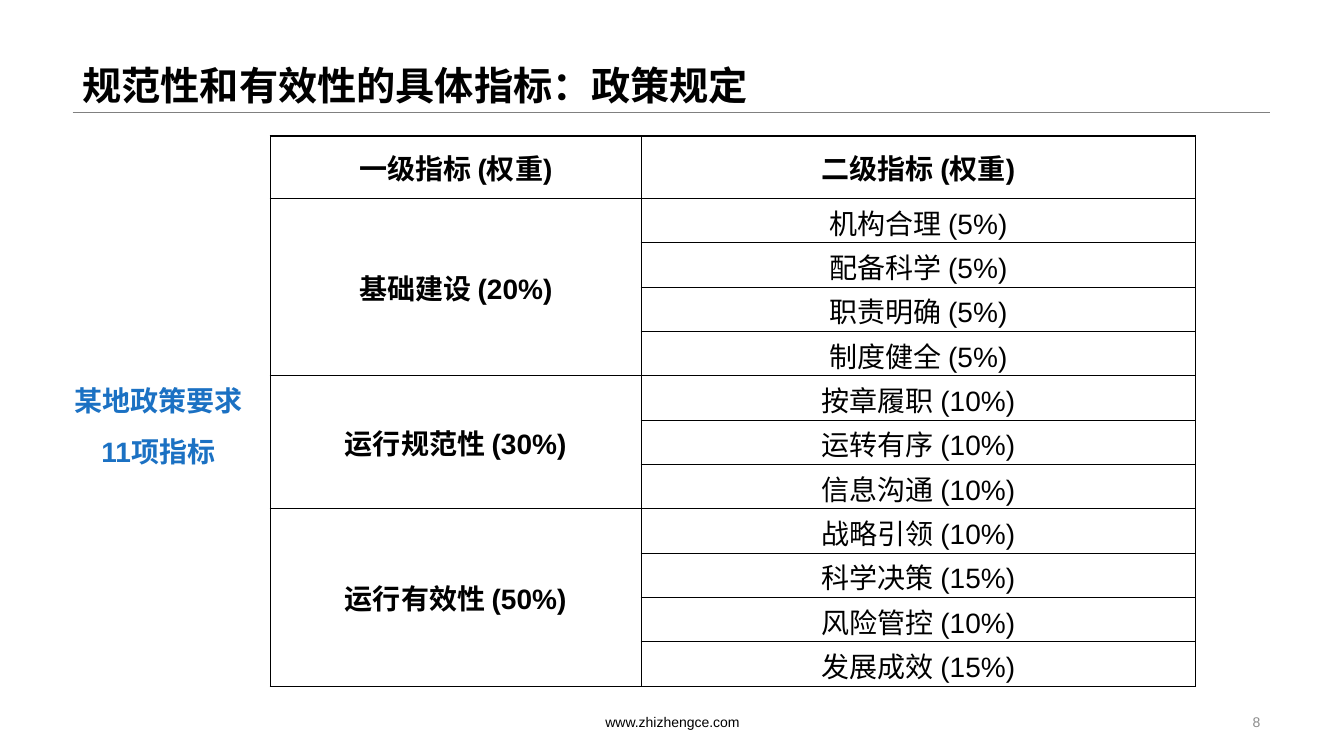
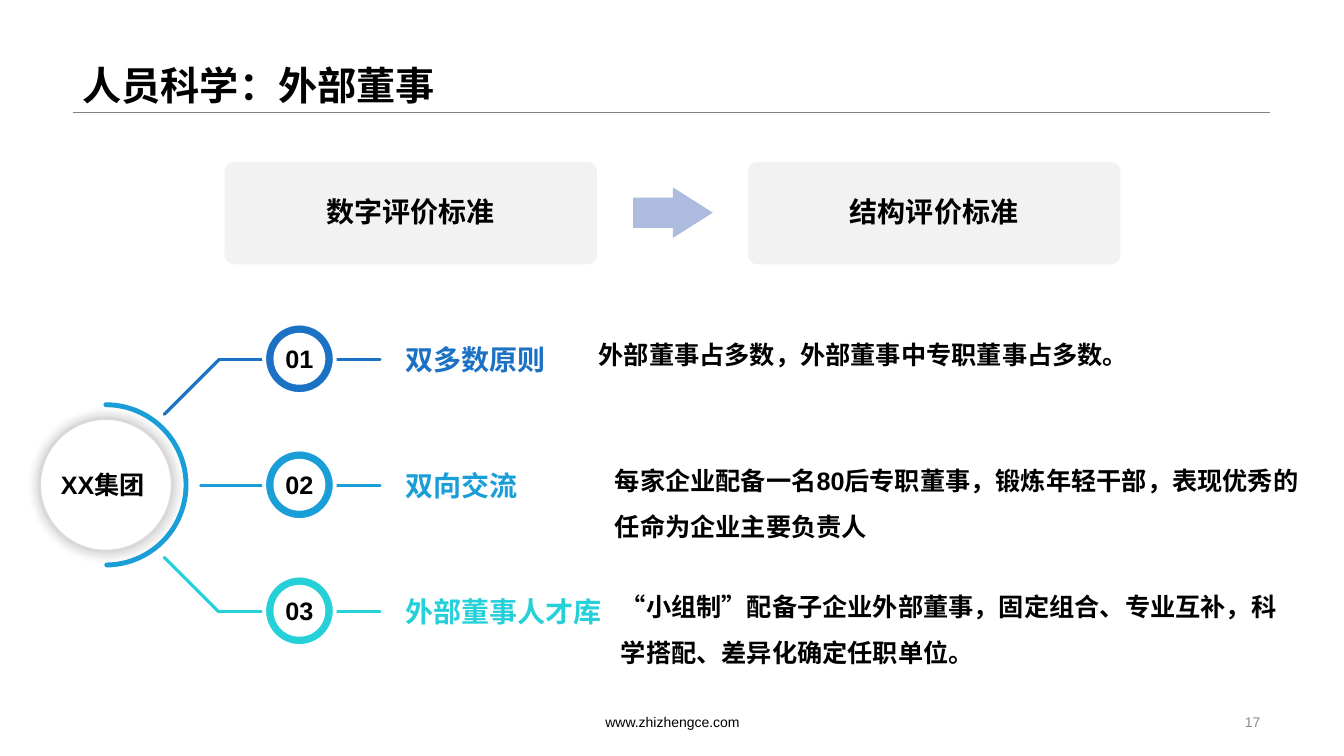
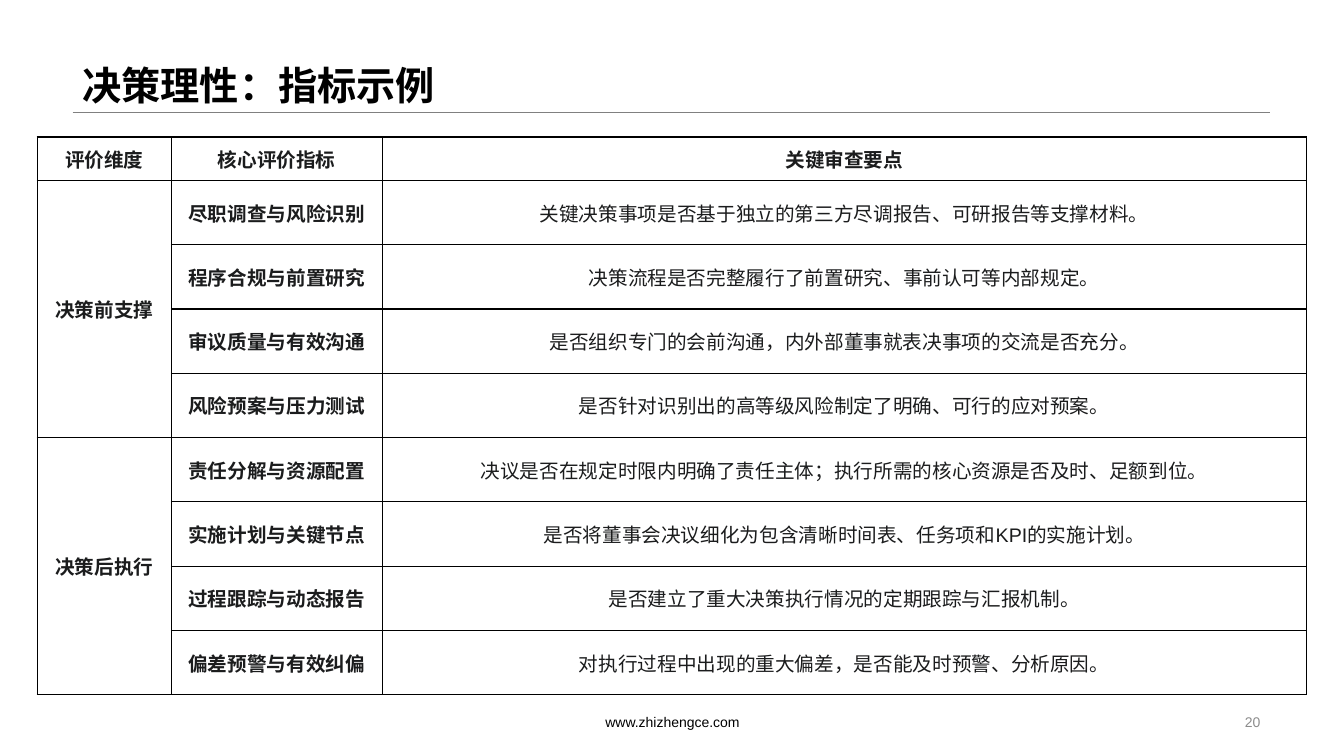
from lxml import etree
from pptx import Presentation
from pptx.dml.color import RGBColor
from pptx.enum.shapes import MSO_CONNECTOR, MSO_SHAPE
from pptx.enum.text import MSO_ANCHOR, PP_ALIGN
from pptx.oxml.ns import qn
from pptx.util import Emu, Inches, Pt

BLACK = RGBColor(0x00, 0x00, 0x00)
WHITE = RGBColor(0xFF, 0xFF, 0xFF)
INK = RGBColor(0x1B, 0x1C, 0x1D)
RULE = RGBColor(0x80, 0x80, 0x80)
MUTED = RGBColor(0x8C, 0x8C, 0x8C)
RING = RGBColor(0xD9, 0xD9, 0xD9)
PANEL = RGBColor(0xF2, 0xF2, 0xF2)
ARROW = RGBColor(0xAC, 0xBB, 0xDE)
BLUE = RGBColor(0x1B, 0x71, 0xC3)
SKY = RGBColor(0x19, 0x9E, 0xD7)
AQUA = RGBColor(0x26, 0xD0, 0xD8)

LEFT, MID, RIGHT = PP_ALIGN.LEFT, PP_ALIGN.CENTER, PP_ALIGN.RIGHT
TOP, CENTRE, BASE = MSO_ANCHOR.TOP, MSO_ANCHOR.MIDDLE, MSO_ANCHOR.BOTTOM
OVAL, DONUT, ARC = MSO_SHAPE.OVAL, MSO_SHAPE.DONUT, MSO_SHAPE.ARC
CARD, POINT = MSO_SHAPE.ROUNDED_RECTANGLE, MSO_SHAPE.RIGHT_ARROW
STRAIGHT = MSO_CONNECTOR.STRAIGHT

FONT, HAN = "Arial", "Noto Sans CJK SC"
CELL = 91440  # one grid column or row: a tenth of an inch


def grid(*units):
    """Turn grid columns or rows into lengths."""
    return [Emu(round(u * CELL)) for u in units]


def sub(node, tag, **attrs):
    return etree.SubElement(node, qn(tag), attrs)


class Deck:
    """Holds the style and the slide being filled."""

    def __init__(self):
        self.prs = Presentation()
        self.prs.slide_width = Inches(13.33)
        self.prs.slide_height = Inches(7.5)

    def page(self, title, number):
        """Start a slide with its title, rule, footer and number."""
        self.slide = self.prs.slides.add_slide(self.prs.slide_layouts[6])
        self.text(48.5, 70.3, 36.4, 2.7, "www.zhizhengce.com", 10, align=MID)
        self.line(7.2, 11.2, 126, 11.2, RULE, 0.75)
        self.text(7.2, 1.4, 118.8, 9.8, title, 28, bold=True, anchor=BASE,
                  font=HAN)
        self.text(85, 70.1, 41, 3, number, 10, MUTED, align=RIGHT,
                  anchor=CENTRE)

    def put(self, par, words, size, color=BLACK, bold=False, align=LEFT,
            font=FONT):
        """Add one styled run to a paragraph."""
        par.alignment = align
        run = par.add_run()
        run.text = words
        run.font.size, run.font.bold = Pt(size), bold
        run.font.color.rgb = color
        run.font.name = font
        sub(run.font._element, "a:ea", typeface=HAN)

    def text(self, x, y, w, h, words, size, color=BLACK, anchor=TOP,
             space=None, **look):
        frame = self.slide.shapes.add_textbox(*grid(x, y, w, h)).text_frame
        frame.word_wrap = True
        frame.vertical_anchor = anchor
        for i, row in enumerate(words.split("\n")):
            par = frame.add_paragraph() if i else frame.paragraphs[0]
            par.line_spacing = space
            self.put(par, row, size, color, **look)

    def shape(self, kind, x, y, w, h, fill=None, edge=None, width=1,
              adj=()):
        item = self.slide.shapes.add_shape(kind, *grid(x, y, w, h))
        item.shadow.inherit = False
        for i, value in enumerate(adj):
            item.adjustments[i] = value
        if fill is None:
            item.fill.background()
        else:
            item.fill.solid()
            item.fill.fore_color.rgb = fill
        if edge is None:
            item.line.fill.background()
        else:
            item.line.color.rgb = edge
            item.line.width = Pt(width)
        return item

    def disc(self, kind, x, y, size, **look):
        """Add a round shape by its centre."""
        return self.shape(kind, x - size / 2, y - size / 2, size, size, **look)

    def label(self, item, words, size):
        """Set bold centred text inside a shape."""
        frame = item.text_frame
        frame.vertical_anchor = CENTRE
        par = frame.paragraphs[0]
        self.put(par, words, size, bold=True, align=MID)
        return par

    def glow(self, item):
        """Give a shape a soft shadow all round."""
        box = item._element.spPr.find(qn("a:effectLst"))
        shade = sub(box, "a:outerShdw", blurRad="76200", sx="106000",
                    sy="106000", algn="ctr", rotWithShape="0")
        sub(sub(shade, "a:srgbClr", val="000000"), "a:alpha", val="12000")

    def line(self, x1, y1, x2, y2, color, width, cap="flat"):
        item = self.slide.shapes.add_connector(STRAIGHT,
                                               *grid(x1, y1, x2, y2))
        item.line.color.rgb = color
        item.line.width = Pt(width)
        item.line._ln.set("cap", cap)
        sub(item._element.spPr, "a:effectLst")

    def table(self, x, y, cols, head, row, rows, size, color, inset):
        """Draw a ruled table; None joins a cell to the one above."""
        high = [head] + [row] * (len(rows) - 1)
        table = self.slide.shapes.add_table(
            len(rows), len(cols), *grid(x, y, sum(cols), sum(high))).table
        table.first_row = table.horz_banding = False
        for col, wide in zip(table.columns, grid(*cols)):
            col.width = wide
        for line, tall in zip(table.rows, grid(*high)):
            line.height = tall
        for r, words in enumerate(rows):
            for c, word in enumerate(words):
                cell = table.cell(r, c)
                self.frame(cell, inset)
                if word is not None:
                    bold = r == 0 or c < len(cols) - 1
                    self.put(cell.text_frame.paragraphs[0], word, size,
                             color, bold, MID)
        starts = [r for r, words in enumerate(rows) if words[0] is not None]
        for first, after in zip(starts, starts[1:] + [len(rows)]):
            if after - first > 1:
                table.cell(first, 0).merge(table.cell(after - 1, 0))

    def frame(self, cell, inset):
        """Set a cell's margins, borders and empty fill."""
        side, edge = grid(*inset)
        cell.margin_left = cell.margin_right = side
        cell.margin_top = cell.margin_bottom = edge
        cell.vertical_anchor = CENTRE
        for tag in ("a:lnL", "a:lnR", "a:lnT", "a:lnB"):
            ln = sub(cell._tc.get_or_add_tcPr(), tag, w=str(Pt(1)))
            sub(sub(ln, "a:solidFill"), "a:srgbClr", val=str(BLACK))
        cell.fill.background()


def spread(groups):
    """List the rows of named groups, the name only in the first."""
    return [(None if i else name, *row)
            for name, rows in groups for i, row in enumerate(rows)]


def weights(deck):
    deck.page("规范性和有效性的具体指标：政策规定", "8")
    groups = [
        ("基础建设 (20%)", [("机构合理 (5%)",), ("配备科学 (5%)",),
                        ("职责明确 (5%)",), ("制度健全 (5%)",)]),
        ("运行规范性 (30%)", [("按章履职 (10%)",), ("运转有序 (10%)",),
                         ("信息沟通 (10%)",)]),
        ("运行有效性 (50%)", [("战略引领 (10%)",), ("科学决策 (15%)",),
                         ("风险管控 (10%)",), ("发展成效 (15%)",)]),
    ]
    rows = [("一级指标 (权重)", "二级指标 (权重)")] + spread(groups)
    deck.table(26.8, 13.5, (36.8, 55), 6.2, 4.4, rows, 20, BLACK, (0.6, 0.3))
    deck.text(4.6, 35.9, 22.2, 10.5, "某地政策要求\n11项指标", 20, BLUE,
              space=1.5, bold=True, align=MID)


def people(deck):
    deck.page("人员科学：外部董事", "17")
    for x, words in ((22.2, "数字评价标准"), (74.1, "结构评价标准")):
        card = deck.shape(CARD, x, 16, 37.1, 10.3, PANEL, WHITE, adj=(0.1,))
        par = deck.label(card, words, 20)
        par.line_spacing, par.space_after = 0.9, Pt(7)
    deck.shape(POINT, 62.8, 18.6, 7.9, 5, ARROW, adj=(0.6, 0.79))

    hub, mid, step = 10.5, 48.2, 12.5
    core = deck.disc(OVAL, hub, mid - 0.1, 13.2, fill=WHITE, edge=RING,
                     width=2.25)
    deck.glow(core)
    arc = deck.disc(ARC, hub, mid - 0.1, 15.9, edge=SKY, width=3.5,
                    adj=(162, 53.61))
    arc.line._ln.set("cap", "rnd")
    deck.text(5, 46.1, 10.4, 4, "XX集团", 18, bold=True, align=MID)

    items = [
        (BLUE, "双多数原则", 58.4, 56.3,
         "外部董事占多数，外部董事中专职董事占多数。"),
        (SKY, "双向交流", 60, 70.8,
         "每家企业配备一名80后专职董事，锻炼年轻干部，表现优秀的任命为企业主要负责人"),
        (AQUA, "外部董事人才库", 60.6, 68.3,
         "“小组制”配备子企业外部董事，固定组合、专业互补，科学搭配、差异化确定任职单位。"),
    ]
    for i, (color, name, x, wide, words) in enumerate(items):
        turn = i - 1
        y = mid + turn * step
        start = 21.7 if turn else 19.9
        deck.line(start, y, 37.7, y, color, 2.25, "rnd")
        if turn:
            deck.line(start, y, 16.3, y - turn * 5.4, color, 2.25, "rnd")
        deck.disc(OVAL, 29.7, y - 0.1, 6.2, fill=WHITE)
        ring = deck.disc(DONUT, 29.7, y - 0.1, 7, fill=color, edge=WHITE,
                         width=2.75, adj=(0.16,))
        ring.text_frame.word_wrap = False
        deck.label(ring, f"{i + 1:02}", 18)
        deck.text(39.2, y - 2.2, 23, 4.4, name, 20, color, bold=True)
        deck.text(x, y - 4, wide, 9.6 if i else 5, words, 18, space=1.5,
                  bold=True)


def reason(deck):
    deck.page("决策理性：指标示例", "20")
    groups = [
        ("决策前支撑", [
            ("尽职调查与风险识别",
             "关键决策事项是否基于独立的第三方尽调报告、可研报告等支撑材料。"),
            ("程序合规与前置研究",
             "决策流程是否完整履行了前置研究、事前认可等内部规定。"),
            ("审议质量与有效沟通",
             "是否组织专门的会前沟通，内外部董事就表决事项的交流是否充分。"),
            ("风险预案与压力测试",
             "是否针对识别出的高等级风险制定了明确、可行的应对预案。")]),
        ("决策后执行", [
            ("责任分解与资源配置",
             "决议是否在规定时限内明确了责任主体；执行所需的核心资源是否及时、足额到位。"),
            ("实施计划与关键节点",
             "是否将董事会决议细化为包含清晰时间表、任务项和KPI的实施计划。"),
            ("过程跟踪与动态报告",
             "是否建立了重大决策执行情况的定期跟踪与汇报机制。"),
            ("偏差预警与有效纠偏",
             "对执行过程中出现的重大偏差，是否能及时预警、分析原因。")]),
    ]
    rows = [("评价维度", "核心评价指标", "关键审查要点")] + spread(groups)
    deck.table(3.7, 13.6, (13.3, 20.9, 91.7), 4.3, 6.38, rows, 14, INK,
               (0.2, 0.2))


def main():
    deck = Deck()
    weights(deck)
    people(deck)
    reason(deck)
    deck.prs.save("out.pptx")


if __name__ == "__main__":
    main()
